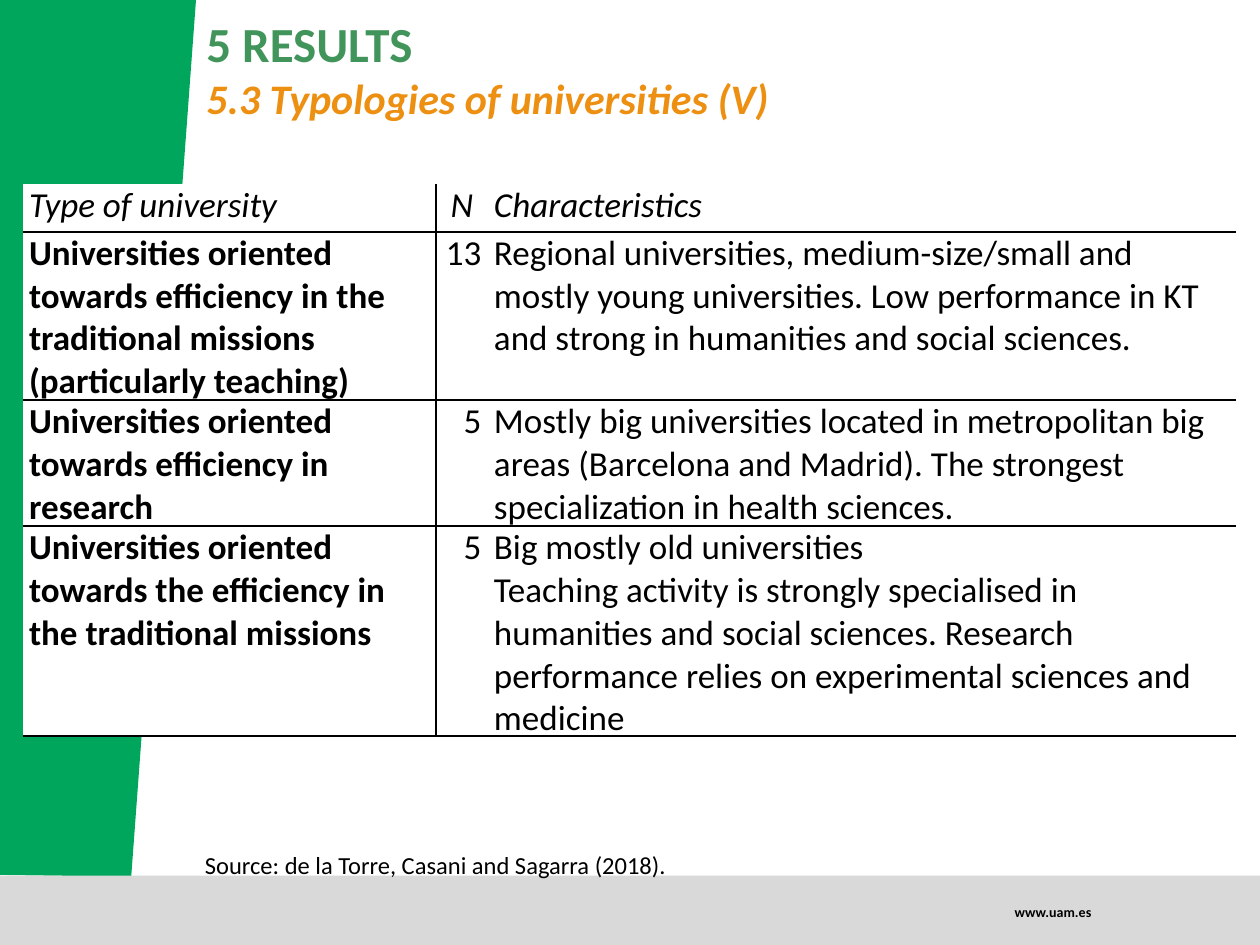
"""Builds a results slide with a table of university types."""
from lxml.etree import SubElement
from pptx import Presentation
from pptx.dml.color import RGBColor as RGB
from pptx.enum.shapes import MSO_SHAPE as SHAPE
from pptx.enum.text import MSO_ANCHOR as ANCHOR, PP_ALIGN as ALIGN
from pptx.oxml.ns import qn
from pptx.util import Pt

COLORS = {
    "band": "00A65C", "foot": "D9D9D9", "title": "42955A",
    "sub": "ED8F11", "ink": "000000", "paper": "FFFFFF",
}
FONT = "Calibri"
WIDTH, HEIGHT = 720, 540
COLS = [236.16, 29.52, 427.68]
ROWS = [27.4, 96, 72, 120]
HEAD = ["Type of university", "N", "Characteristics"]
TYPES = [
    ["Universities oriented towards efficiency in the traditional missions "
     "(particularly teaching)", "13",
     "Regional universities, medium-size/small and mostly young universities. "
     "Low performance in KT and strong in humanities and social sciences."],
    ["Universities oriented towards efficiency in research", "5",
     "Mostly big universities located in metropolitan big areas (Barcelona and "
     "Madrid). The strongest specialization in health sciences."],
    ["Universities oriented towards the efficiency in the traditional missions",
     "5",
     "Big mostly old universities\nTeaching activity is strongly specialised in "
     "humanities and social sciences. Research performance relies on "
     "experimental sciences and medicine"],
]


def paint(shape, color):
    shape.shadow.inherit = False
    shape.fill.solid()
    shape.fill.fore_color.rgb = RGB.from_string(COLORS[color])
    shape.line.fill.background()


def add_run(para, text, size, color="ink", bold=False, italic=False):
    run = para.add_run()
    run.text = text
    font = run.font
    font.name, font.size = FONT, Pt(size)
    font.bold, font.italic = bold, italic
    font.color.rgb = RGB.from_string(COLORS[color])


def add_band(slide):
    pen = slide.shapes.build_freeform(0, 0, scale=Pt(1))
    pen.add_line_segments([(111.6, 0), (74.9, 501), (0, 500.4)], close=True)
    paint(pen.convert_to_shape(), "band")


def add_foot(slide):
    top = 500.4
    bar = slide.shapes.add_shape(
        SHAPE.RECTANGLE, 0, Pt(top), Pt(WIDTH), Pt(HEIGHT - top))
    paint(bar, "foot")


def add_text(slide, box, lines, align=ALIGN.LEFT, anchor=ANCHOR.TOP):
    frame = slide.shapes.add_textbox(*map(Pt, box)).text_frame
    frame.word_wrap, frame.vertical_anchor = True, anchor
    for num, (text, style) in enumerate(lines):
        para = frame.add_paragraph() if num else frame.paragraphs[0]
        para.alignment = align
        add_run(para, text, **style)


def set_edges(cell, shown):
    props = cell._tc.get_or_add_tcPr()
    for side in "LRTB":
        line = SubElement(props, qn(f"a:ln{side}"), w=str(Pt(1)))
        if side in shown:
            fill = SubElement(line, qn("a:solidFill"))
            SubElement(fill, qn("a:srgbClr"), val=COLORS["ink"])
        else:
            SubElement(line, qn("a:noFill"))


def fill_cell(cell, text, row, col):
    set_edges(cell, ("R", "L", "")[col] + "B" + ("T" if row else ""))
    cell.fill.solid()
    cell.fill.fore_color.rgb = RGB.from_string(COLORS["paper"])
    cell.margin_left = cell.margin_right = Pt(3.6)
    cell.margin_top = cell.margin_bottom = 0
    for num, part in enumerate(text.split("\n")):
        frame = cell.text_frame
        para = frame.add_paragraph() if num else frame.paragraphs[0]
        if col == 1:
            para.alignment = ALIGN.RIGHT if row else ALIGN.CENTER
        add_run(para, part, 20, bold=row > 0 and col == 0, italic=row == 0)


def add_grid(slide):
    data = [HEAD] + TYPES
    table = slide.shapes.add_table(
        len(ROWS), len(COLS), Pt(13), Pt(105.1),
        Pt(sum(COLS)), Pt(sum(ROWS))).table
    table.first_row = table.horz_banding = False
    for col, width in zip(table.columns, COLS):
        col.width = Pt(width)
    for row, (height, texts) in enumerate(zip(ROWS, data)):
        table.rows[row].height = Pt(height)
        for col, text in enumerate(texts):
            fill_cell(table.cell(row, col), text, row, col)


def main():
    deck = Presentation()
    deck.slide_width, deck.slide_height = Pt(WIDTH), Pt(HEIGHT)
    slide = deck.slides.add_slide(deck.slide_layouts[6])
    add_band(slide)
    add_foot(slide)
    add_text(slide, (542.2, 512.6, 88.6, 17.3),
             [("www.uam.es", dict(size=8, bold=True))],
             ALIGN.RIGHT, ANCHOR.MIDDLE)
    add_grid(slide)
    add_text(slide, (110.9, 4.3, 609.1, 70.6), [
        ("5 RESULTS", dict(size=28, color="title", bold=True)),
        ("5.3 Typologies of universities (V)",
         dict(size=24, color="sub", bold=True, italic=True)),
    ])
    add_text(slide, (110, 482.4, 499, 24.5),
             [("Source: de la Torre, Casani and Sagarra (2018).",
               dict(size=14))])
    deck.save("out.pptx")


if __name__ == "__main__":
    main()
